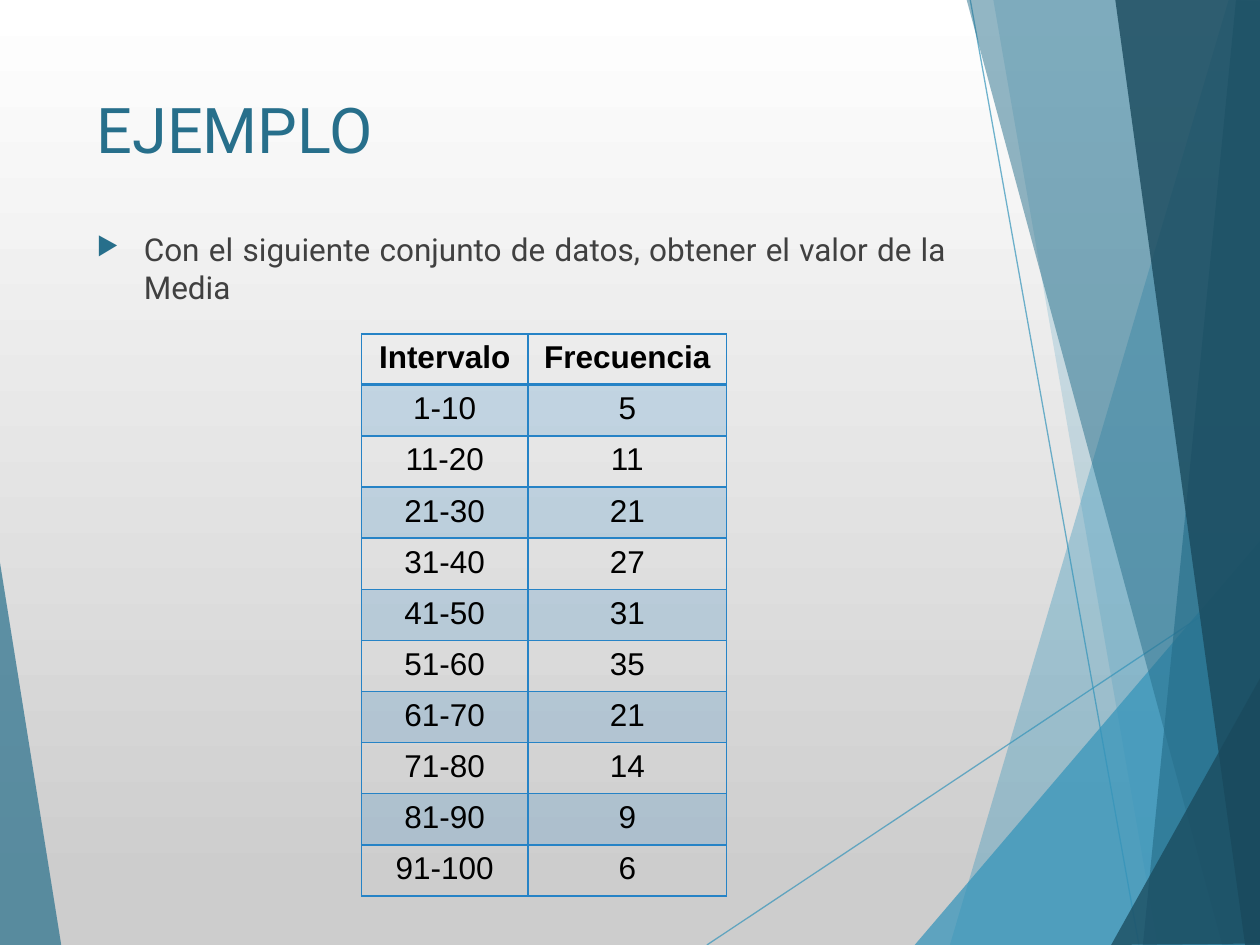
from dataclasses import dataclass

from lxml import etree
from pptx import Presentation
from pptx.dml.color import RGBColor
from pptx.enum.shapes import MSO_CONNECTOR
from pptx.enum.text import MSO_ANCHOR, PP_ALIGN
from pptx.oxml.ns import qn
from pptx.util import Cm, Pt

STRAIGHT = MSO_CONNECTOR.STRAIGHT
TOP = MSO_ANCHOR.TOP
CENTER, JUSTIFY, LEFT = PP_ALIGN.CENTER, PP_ALIGN.JUSTIFY, PP_ALIGN.LEFT
BLANK_LAYOUT = 6
WIDTH, HEIGHT = 25.4, 19.05

COLORS = {
    "white": "FFFFFF",
    "gray": "CDCDCD",
    "cyan": "3494BA",
    "teal": "276F8B",
    "navy": "1A4A5D",
    "text": "404040",
    "black": "000000",
    "grid": "2683C6",
}


@dataclass(frozen=True)
class Facet:
    color: str
    opacity: int
    points: tuple


@dataclass(frozen=True)
class Ray:
    start: tuple
    end: tuple


@dataclass(frozen=True)
class TextBlock:
    text: str
    box: tuple
    size: int
    color: str
    alignment: int


RAYS = (
    Ray((14.25, HEIGHT), (25.43, 11.61)),
    Ray((19.56, 0), (22.96, HEIGHT)),
)
FACETS = (
    Facet("cyan", 36, ((24.77, 0), (19.15, HEIGHT), (25.45, 19.08), (25.45, 0.03))),
    Facet("cyan", 20, ((20.02, -0.03), (23.34, HEIGHT), (25.43, HEIGHT), (25.43, -0.03))),
    Facet("cyan", 72, ((18.44, HEIGHT), (25.4, 10.9), (25.43, HEIGHT))),
    Facet("teal", 50, ((19.48, -0.03), (24.64, HEIGHT), (25.43, 19.02), (25.43, -0.03))),
    Facet("teal", 66, ((24.92, -0.03), (23.04, HEIGHT), (25.43, HEIGHT), (25.4, -0.03))),
    Facet("navy", 80, ((22.48, -0.03), (25.1, HEIGHT), (25.45, HEIGHT), (25.4, -0.03))),
    Facet("navy", 76, ((22.4, HEIGHT), (25.45, 13.59), (25.45, 19.02))),
    Facet("teal", 70, ((-0.03, 11.15), (1.24, 19.08), (-0.03, HEIGHT))),
)
TITLE = TextBlock("EJEMPLO", (1.7, 1.7, 17.63, 2.7), 36, "teal", LEFT)
STATEMENT = TextBlock(
    "Con el siguiente conjunto de datos, obtener el valor de la Media",
    (1.7, 4.52, 17.63, 3), 18, "text", JUSTIFY)

HEADERS = ("Intervalo", "Frecuencia")
FREQUENCIES = (
    ("1-10", 5), ("11-20", 11), ("21-30", 21), ("31-40", 27), ("41-50", 31),
    ("51-60", 35), ("61-70", 21), ("71-80", 14), ("81-90", 9), ("91-100", 6),
)
TABLE_LEFT, TABLE_TOP, ROW_HEIGHT = 7.29, 6.73, 1.03
COLUMN_WIDTHS = (3.35, 4.01)


def rgb(name: str) -> RGBColor:
    return RGBColor.from_string(COLORS[name])


def add_element(parent, tag: str, **attributes):
    return etree.SubElement(parent, qn(tag), attributes)


def set_color(fill, color: str, opacity: int) -> None:
    """Fill with a solid colour at the given opacity in percent."""
    fill.solid()
    fill.fore_color.rgb = rgb(color)
    for element in fill._xPr.iterfind(f"{qn('a:solidFill')}/{qn('a:srgbClr')}"):
        add_element(element, "a:alpha", val=str(opacity * 1000))


def set_format(target, values: dict) -> None:
    for name, value in values.items():
        setattr(target, name, value)


def format_font(font, size: int, color: str, name: str, bold: bool = False) -> None:
    set_format(font, {"size": Pt(size), "name": name, "bold": bold})
    font.color.rgb = rgb(color)


def paint_background(slide) -> None:
    fill = slide.background.fill
    fill.gradient()
    fill.gradient_angle = 270
    stops = (("white", 0), ("gray", 0.94))
    for stop, (color, position) in zip(fill.gradient_stops, stops):
        stop.color.rgb = rgb(color)
        stop.position = position


def draw_ray(slide, ray: Ray) -> None:
    ends = [Cm(value) for value in ray.start + ray.end]
    connector = slide.shapes.add_connector(STRAIGHT, *ends)
    connector.line.width = Pt(0.75)
    set_color(connector.line.fill, "cyan", 70)
    add_element(connector._element.spPr, "a:effectLst")


def draw_facet(slide, facet: Facet) -> None:
    first, *others = [(Cm(x), Cm(y)) for x, y in facet.points]
    builder = slide.shapes.build_freeform(*first)
    builder.add_line_segments(others, close=True)
    shape = builder.convert_to_shape()
    shape.shadow.inherit = False
    shape.line.fill.background()
    set_color(shape.fill, facet.color, facet.opacity)


def draw_text(slide, block: TextBlock):
    shape = slide.shapes.add_textbox(*map(Cm, block.box))
    set_format(shape.text_frame, {"word_wrap": True, "vertical_anchor": TOP})
    paragraph = shape.text_frame.paragraphs[0]
    paragraph.alignment = block.alignment
    run = paragraph.add_run()
    run.text = block.text
    format_font(run.font, block.size, block.color, "Roboto")
    return paragraph


def add_bullet(paragraph) -> None:
    paragraph.space_before = Pt(10)
    properties = paragraph._p.get_or_add_pPr()
    properties.set("marL", str(Cm(0.95)))
    properties.set("indent", str(Cm(-0.95)))
    color = add_element(properties, "a:buClr")
    add_element(color, "a:srgbClr", val=COLORS["teal"])
    add_element(properties, "a:buSzPct", val="80000")
    add_element(properties, "a:buChar", char="▶")


def add_borders(cell, widths: dict) -> None:
    properties = cell._tc.get_or_add_tcPr()
    for side, width in widths.items():
        line = add_element(properties, f"a:ln{side}", w=str(Pt(width)))
        fill = add_element(line, "a:solidFill")
        add_element(fill, "a:srgbClr", val=COLORS["grid"])


def draw_table(slide) -> None:
    rows = (HEADERS,) + FREQUENCIES
    frame = slide.shapes.add_table(
        len(rows), len(HEADERS), Cm(TABLE_LEFT), Cm(TABLE_TOP),
        Cm(sum(COLUMN_WIDTHS)), Cm(ROW_HEIGHT * len(rows)))
    table = frame.table
    set_format(table, {"first_row": False, "horz_banding": False})
    for column, width in zip(table.columns, COLUMN_WIDTHS):
        column.width = Cm(width)
    for row_index, values in enumerate(rows):
        table.rows[row_index].height = Cm(ROW_HEIGHT)
        for column_index, value in enumerate(values):
            cell = table.cell(row_index, column_index)
            add_borders(cell, {"L": 1, "R": 1,
                               "T": 2 if row_index == 1 else 1,
                               "B": 2 if row_index == 0 else 1})
            if row_index % 2:
                set_color(cell.fill, "grid", 20)
            else:
                cell.fill.background()
            paragraph = cell.text_frame.paragraphs[0]
            paragraph.alignment = CENTER
            run = paragraph.add_run()
            run.text = str(value)
            format_font(run.font, 18, "black", "Arial", bold=row_index == 0)


def main() -> None:
    presentation = Presentation()
    set_format(presentation, {"slide_width": Cm(WIDTH), "slide_height": Cm(HEIGHT)})
    slide = presentation.slides.add_slide(presentation.slide_layouts[BLANK_LAYOUT])
    paint_background(slide)
    for ray in RAYS:
        draw_ray(slide, ray)
    for facet in FACETS:
        draw_facet(slide, facet)
    draw_text(slide, TITLE)
    add_bullet(draw_text(slide, STATEMENT))
    draw_table(slide)
    presentation.save("out.pptx")


if __name__ == "__main__":
    main()
